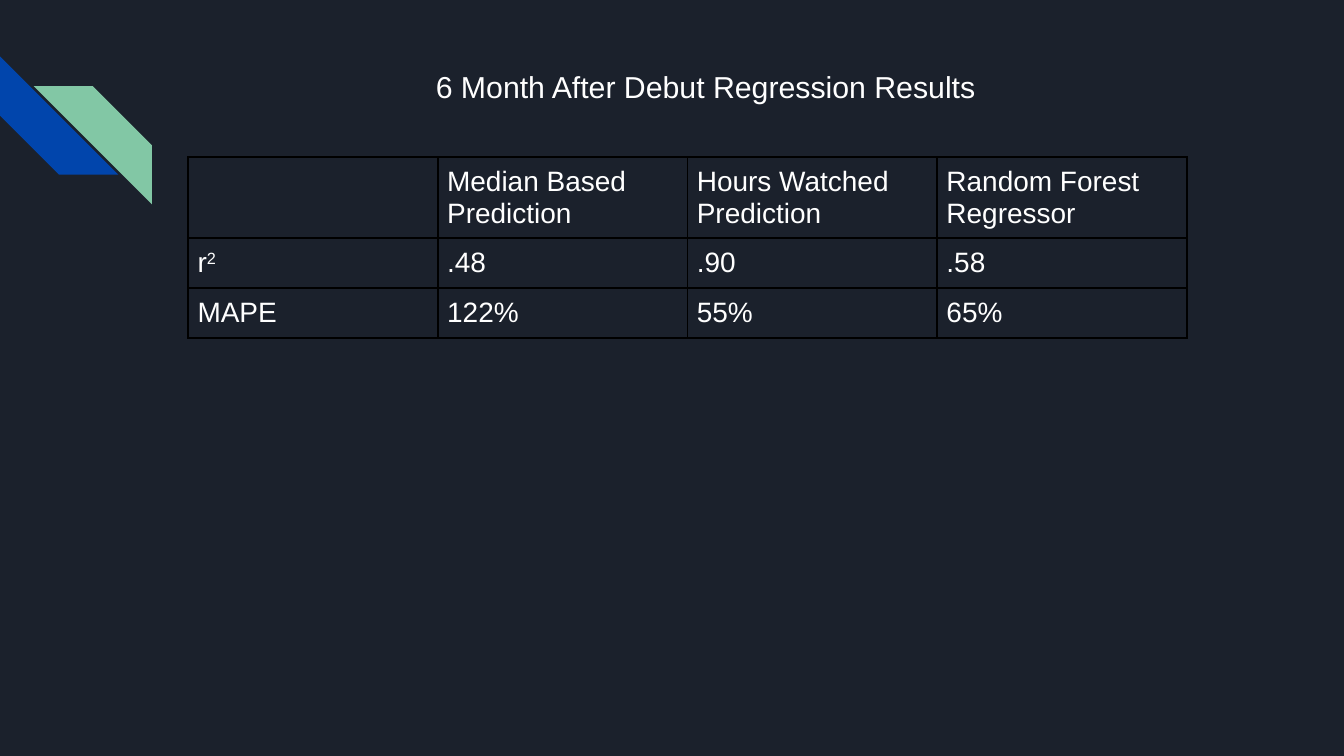
from lxml import etree
from pptx import Presentation
from pptx.dml.color import RGBColor
from pptx.enum.shapes import MSO_SHAPE
from pptx.enum.text import MSO_ANCHOR, PP_ALIGN
from pptx.oxml.ns import qn
from pptx.util import Inches, Pt

NAVY = RGBColor(0x1B, 0x21, 0x2C)
BLUE = RGBColor(0x01, 0x45, 0xAC)
GREEN = RGBColor(0x82, 0xC7, 0xA5)
WHITE = RGBColor(0xFF, 0xFF, 0xFF)
BLACK = RGBColor(0x00, 0x00, 0x00)

STRIPE = MSO_SHAPE.DIAGONAL_STRIPE
MIDDLE = MSO_ANCHOR.MIDDLE
LEFT, CENTER = PP_ALIGN.LEFT, PP_ALIGN.CENTER
TITLE_ONLY = 5
FONT = "Arial"
PAGE_WIDTH = 10
PAGE_HEIGHT = PAGE_WIDTH * 9 / 16

RESULTS = [
    ["", "Median Based Prediction", "Hours Watched Prediction", "Random Forest Regressor"],
    ["r^2", ".48", ".90", ".58"],
    ["MAPE", "122%", "55%", "65%"],
]
ROW_HEIGHTS = [0.6, 0.37, 0.37]


def write_text(frame, text, size=15, align=LEFT, spacing=1.0, margin=0.07):
    """Write one paragraph; whatever follows a ^ is superscript."""
    frame.word_wrap = True
    frame.margin_left = frame.margin_right = Inches(margin)
    frame.margin_top = frame.margin_bottom = Inches(margin)
    para = frame.paragraphs[0]
    para.alignment = align
    para.line_spacing = spacing
    for index, part in enumerate(text.split("^")):
        span = para.add_run()
        span.text = part
        span.font.name = FONT
        span.font.size = Pt(size)
        span.font.color.rgb = WHITE
        if index:
            span.font._element.set("baseline", "30000")


def border_cell(cell, color=BLACK, width=1):
    properties = cell._tc.get_or_add_tcPr()
    for position, side in enumerate(("a:lnL", "a:lnR", "a:lnT", "a:lnB")):
        line = etree.Element(qn(side), w=str(Pt(width)))
        fill = etree.SubElement(line, qn("a:solidFill"))
        etree.SubElement(fill, qn("a:srgbClr"), val=str(color))
        properties.insert(position, line)


def add_stripes(page, left, top, size=0.88):
    """Two interlocking diagonal stripes, the second shifted right and down."""
    for color, shift_x, shift_y, turn in ((BLUE, 0, 0, 270), (GREEN, 0.25, 0.22, 90)):
        stripe = page.shapes.add_shape(
            STRIPE, Inches(left + shift_x), Inches(top + shift_y), Inches(size), Inches(size))
        stripe.adjustments[0] = 0.5
        stripe.rotation = turn
        stripe.shadow.inherit = False
        stripe.fill.solid()
        stripe.fill.fore_color.rgb = color
        stripe.line.fill.background()


def set_title(page, text, left, top, width, height):
    title = page.shapes.title
    title.left, title.top = Inches(left), Inches(top)
    title.width, title.height = Inches(width), Inches(height)
    title.text_frame.vertical_anchor = MIDDLE
    write_text(title.text_frame, text, size=16.2, align=CENTER, spacing=0.8, margin=0.1)


def add_results_table(page, left, top, width):
    frame = page.shapes.add_table(
        len(RESULTS), len(RESULTS[0]), Inches(left), Inches(top),
        Inches(width), Inches(sum(ROW_HEIGHTS)))
    table = frame.table
    table.first_row = table.horz_banding = False
    for column in table.columns:
        column.width = Inches(width / len(RESULTS[0]))
    for row, height, texts in zip(table.rows, ROW_HEIGHTS, RESULTS):
        row.height = Inches(height)
        for cell, text in zip(row.cells, texts):
            cell.fill.background()
            border_cell(cell)
            cell.margin_left = cell.margin_right = Inches(0.07)
            cell.margin_top = cell.margin_bottom = Inches(0.07)
            if text:
                write_text(cell.text_frame, text)


def main():
    deck = Presentation()
    deck.slide_width, deck.slide_height = Inches(PAGE_WIDTH), Inches(PAGE_HEIGHT)
    page = deck.slides.add_slide(deck.slide_layouts[TITLE_ONLY])
    page.background.fill.solid()
    page.background.fill.fore_color.rgb = NAVY

    add_stripes(page, 0, 0.42)
    set_title(page, "6 Month After Debut Regression Results", 1.4, 0.4, 7.7, 0.54)
    add_results_table(page, 1.4, 1.17, 7.43)
    deck.save("out.pptx")


if __name__ == "__main__":
    main()
